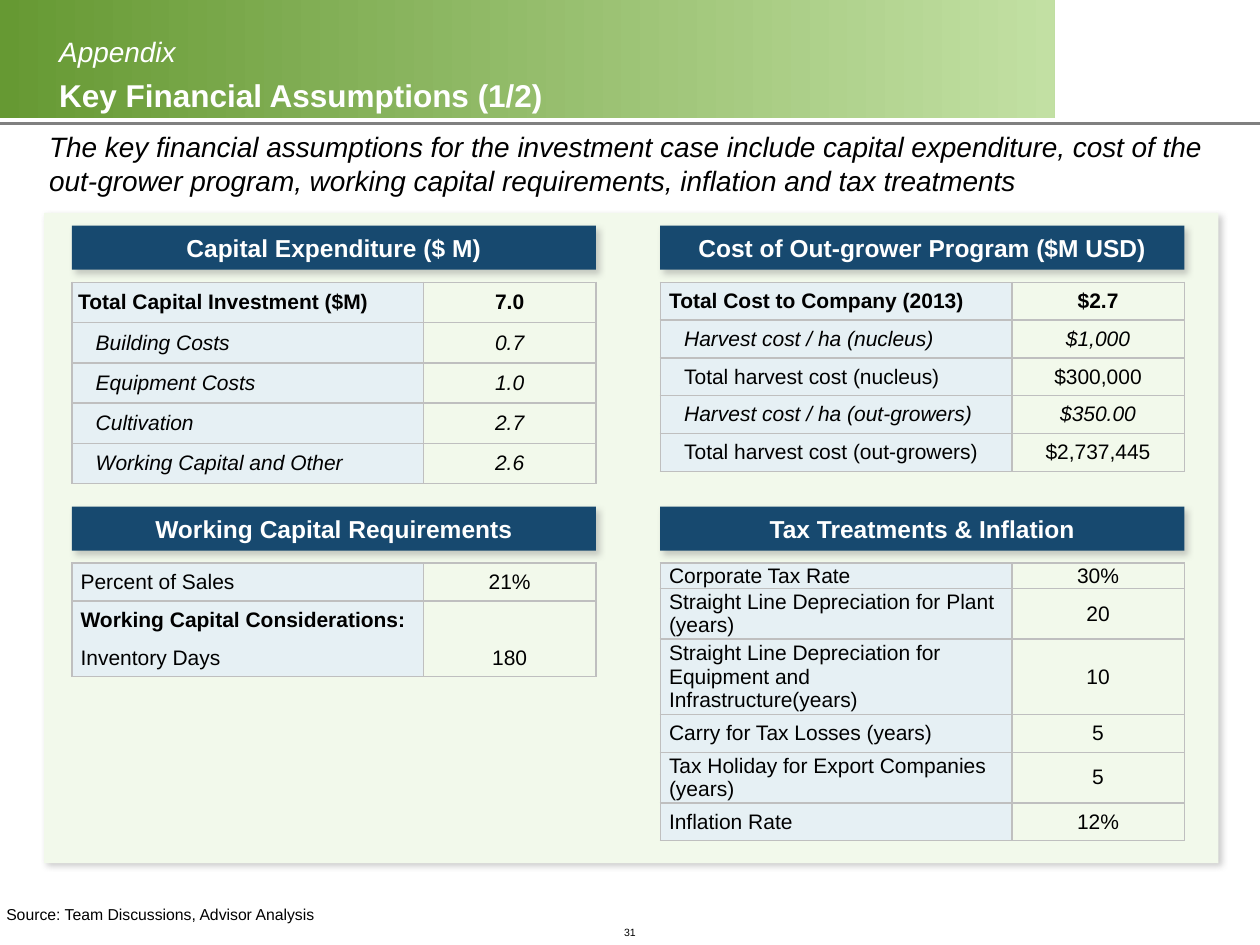
from dataclasses import dataclass

from lxml import etree
from pptx import Presentation
from pptx import util as u
from pptx.dml.color import RGBColor
from pptx.enum import shapes, text
from pptx.oxml import ns


@dataclass(frozen=True)
class Theme:
    font: str = "Arial"
    black: str = "000000"
    white: str = "FFFFFF"
    green: str = "669933"
    light_green: str = "C2E0A3"
    panel: str = "F2F9EB"
    navy: str = "17496F"
    label_fill: str = "E6F0F4"
    border: str = "BFBFBF"
    gray: str = "808080"
    title: int = 18
    lead: int = 16
    heading: int = 14
    body: int = 12
    source: int = 9
    number: int = 6


@dataclass(frozen=True)
class Row:
    label: str
    value: str
    height: float = 0.3
    bold: bool = False
    italic: bool = False
    indent: float = 0
    inset: float = 0.07
    joins_next: bool = False


THEME = Theme()
WIDTH, HEIGHT = 10, 7.5
LEFT, TOP = 0.57, 1.79
COLUMN_STEP, ROW_STEP = 4.67, 2.23
LABEL_WIDTH, VALUE_WIDTH = 2.79, 1.37
HEADING_HEIGHT, TABLE_OFFSET = 0.35, 0.45
SUB = 0.12
CENTER = text.PP_ALIGN.CENTER
MIDDLE, BOTTOM = text.MSO_ANCHOR.MIDDLE, text.MSO_ANCHOR.BOTTOM

# Each section: grid column, grid row, heading, table rows
SECTIONS = [
    (0, 0, "Capital Expenditure ($ M)", [
        Row("Total Capital Investment ($M)", "7.0", 0.32, bold=True, inset=0.05),
        Row("Building Costs", "0.7", 0.32, italic=True, indent=SUB),
        Row("Equipment Costs", "1.0", 0.32, italic=True, indent=SUB),
        Row("Cultivation", "2.7", 0.32, italic=True, indent=SUB),
        Row("Working Capital and Other", "2.6", 0.32, italic=True, indent=SUB),
    ]),
    (1, 0, "Cost of Out-grower Program ($M USD)", [
        Row("Total Cost to Company (2013)", "$2.7", bold=True),
        Row("Harvest cost / ha (nucleus)", "$1,000", italic=True, indent=SUB),
        Row("Total harvest cost (nucleus)", "$300,000", indent=SUB),
        Row("Harvest cost / ha (out-growers)", "$350.00", italic=True, indent=SUB),
        Row("Total harvest cost (out-growers)", "$2,737,445", indent=SUB),
    ]),
    (0, 1, "Working Capital Requirements", [
        Row("Percent of Sales", "21%"),
        Row("Working Capital Considerations:", "", bold=True, joins_next=True),
        Row("Inventory Days", "180"),
    ]),
    (1, 1, "Tax Treatments & Inflation", [
        Row("Corporate Tax Rate", "30%", 0.2),
        Row("Straight Line Depreciation for Plant (years)", "20", 0.4),
        Row("Straight Line Depreciation for Equipment and Infrastructure(years)", "10", 0.6),
        Row("Carry for Tax Losses (years)", "5"),
        Row("Tax Holiday for Export Companies (years)", "5", 0.4),
        Row("Inflation Rate", "12%"),
    ]),
]


def color(value):
    return RGBColor.from_string(value)


def box(left, top, width, height):
    return [u.Inches(length) for length in (left, top, width, height)]


def add_run(paragraph, words, size, ink=THEME.black, bold=False, italic=False):
    run = paragraph.add_run()
    run.text = words
    font = run.font
    font.name, font.size, font.bold, font.italic = THEME.font, u.Pt(size), bold, italic
    font.color.rgb = color(ink)


def set_frame(frame, anchor, vertical_inset=0.05, wrap=True):
    frame.word_wrap = wrap
    frame.vertical_anchor = anchor
    frame.margin_left = frame.margin_right = u.Inches(0.05)
    frame.margin_top = frame.margin_bottom = u.Inches(vertical_inset)
    return frame.paragraphs[0]


def add_text(slide, bounds, anchor, vertical_inset=0.05, wrap=True):
    """Add a text box and return its first paragraph."""
    shape = slide.shapes.add_textbox(*box(*bounds))
    return set_frame(shape.text_frame, anchor, vertical_inset, wrap)


def add_rectangle(slide, bounds, fill=None):
    shape = slide.shapes.add_shape(shapes.MSO_SHAPE.RECTANGLE, *box(*bounds))
    shape.shadow.inherit = False
    shape.line.fill.background()
    if fill:
        shape.fill.solid()
        shape.fill.fore_color.rgb = color(fill)
    return shape


def add_shadow(shape):
    effects = shape._element.spPr.find(ns.qn("a:effectLst"))
    shadow = etree.SubElement(effects, ns.qn("a:outerShdw"), blurRad=str(u.Pt(4)),
                              dist=str(u.Pt(3)), dir=str(45 * 60000),
                              algn="tl", rotWithShape="0")
    ink = etree.SubElement(shadow, ns.qn("a:srgbClr"), val=THEME.gray)
    etree.SubElement(ink, ns.qn("a:alpha"), val="40000")


def add_banner(slide):
    banner = add_rectangle(slide, (0, 0, 8.37, 0.94))
    banner.fill.gradient()
    banner.fill.gradient_angle = 0
    for stop, ink in zip(banner.fill.gradient_stops, (THEME.green, THEME.light_green)):
        stop.color.rgb = color(ink)
    rule = slide.shapes.add_connector(shapes.MSO_CONNECTOR.STRAIGHT,
                                      *box(0, 0.98, WIDTH, 0.98))
    rule.line.color.rgb = color(THEME.gray)
    rule.line.width = u.Pt(2.25)
    etree.SubElement(rule._element.spPr, ns.qn("a:effectLst"))

    title = add_text(slide, (0.42, 0.04, 7.87, 0.86), BOTTOM, 0)
    title.line_spacing = 1.2
    add_run(title, "Appendix", THEME.lead, THEME.white, italic=True)
    title.add_line_break()
    add_run(title, "Key Financial Assumptions (1/2)", THEME.title, THEME.white, bold=True)


def add_heading(slide, left, top, words):
    heading = add_rectangle(
        slide, (left, top, LABEL_WIDTH + VALUE_WIDTH, HEADING_HEIGHT), THEME.navy)
    add_shadow(heading)
    paragraph = set_frame(heading.text_frame, MIDDLE)
    paragraph.alignment = CENTER
    add_run(paragraph, words, THEME.heading, THEME.white, bold=True)


def set_borders(cell, open_sides):
    properties = cell._tc.get_or_add_tcPr()
    for side in "LRTB":
        line = etree.SubElement(properties, ns.qn(f"a:ln{side}"), w=str(u.Pt(1)))
        if side in open_sides:
            etree.SubElement(line, ns.qn("a:noFill"))
        else:
            fill = etree.SubElement(line, ns.qn("a:solidFill"))
            etree.SubElement(fill, ns.qn("a:srgbClr"), val=THEME.border)


def fill_cell(cell, words, row, open_sides, is_label):
    set_borders(cell, open_sides)
    cell.vertical_anchor = MIDDLE
    cell.margin_left = cell.margin_right = u.Inches(row.inset)
    cell.margin_top = cell.margin_bottom = 0
    paragraph = cell.text_frame.paragraphs[0]
    if is_label:
        cell.fill.solid()
        cell.fill.fore_color.rgb = color(THEME.label_fill)
        paragraph._p.get_or_add_pPr().set("marL", str(u.Inches(row.indent)))
    else:
        cell.fill.background()
        paragraph.alignment = CENTER
    if words:
        paragraph.space_before = paragraph.space_after = u.Pt(1)
        add_run(paragraph, words, THEME.body, bold=row.bold, italic=row.italic)


def add_assumptions(slide, left, top, rows):
    bounds = box(left, top, LABEL_WIDTH + VALUE_WIDTH, sum(row.height for row in rows))
    table = slide.shapes.add_table(len(rows), 2, *bounds).table
    table.first_row = table.horz_banding = False
    for column, width in zip(table.columns, (LABEL_WIDTH, VALUE_WIDTH)):
        column.width = u.Inches(width)
    for index, row in enumerate(rows):
        table.rows[index].height = u.Inches(row.height)
        joins_previous = index > 0 and rows[index - 1].joins_next
        open_sides = "T" * joins_previous + "B" * row.joins_next
        fill_cell(table.cell(index, 0), row.label, row, open_sides, True)
        fill_cell(table.cell(index, 1), row.value, row, open_sides, False)


def main():
    presentation = Presentation()
    presentation.slide_width, presentation.slide_height = u.Inches(WIDTH), u.Inches(HEIGHT)
    slide = presentation.slides.add_slide(presentation.slide_layouts[6])

    add_banner(slide)
    number = add_text(slide, (0.49 * WIDTH, 7.3, 0.2, 0.2), BOTTOM, wrap=False)
    number.alignment = CENTER
    add_run(number, "31", THEME.number)
    lead = add_text(slide, (0.34, 0.98, 9.31, 0.64), text.MSO_ANCHOR.TOP)
    add_run(lead, "The key financial assumptions for the investment case include capital "
                  "expenditure, cost of the out-grower program, working capital "
                  "requirements, inflation and tax treatments", THEME.lead, italic=True)
    source = add_text(slide, (0, 6.61, WIDTH, 0.77), BOTTOM)
    add_run(source, "Source: Team Discussions, Advisor Analysis", THEME.source)

    add_shadow(add_rectangle(slide, (0.35, 1.69, 9.32, 5.16), THEME.panel))
    for column, row, heading, rows in SECTIONS:
        left, top = LEFT + column * COLUMN_STEP, TOP + row * ROW_STEP
        add_heading(slide, left, top, heading)
        add_assumptions(slide, left, top + TABLE_OFFSET, rows)
    presentation.save("out.pptx")


if __name__ == "__main__":
    main()
